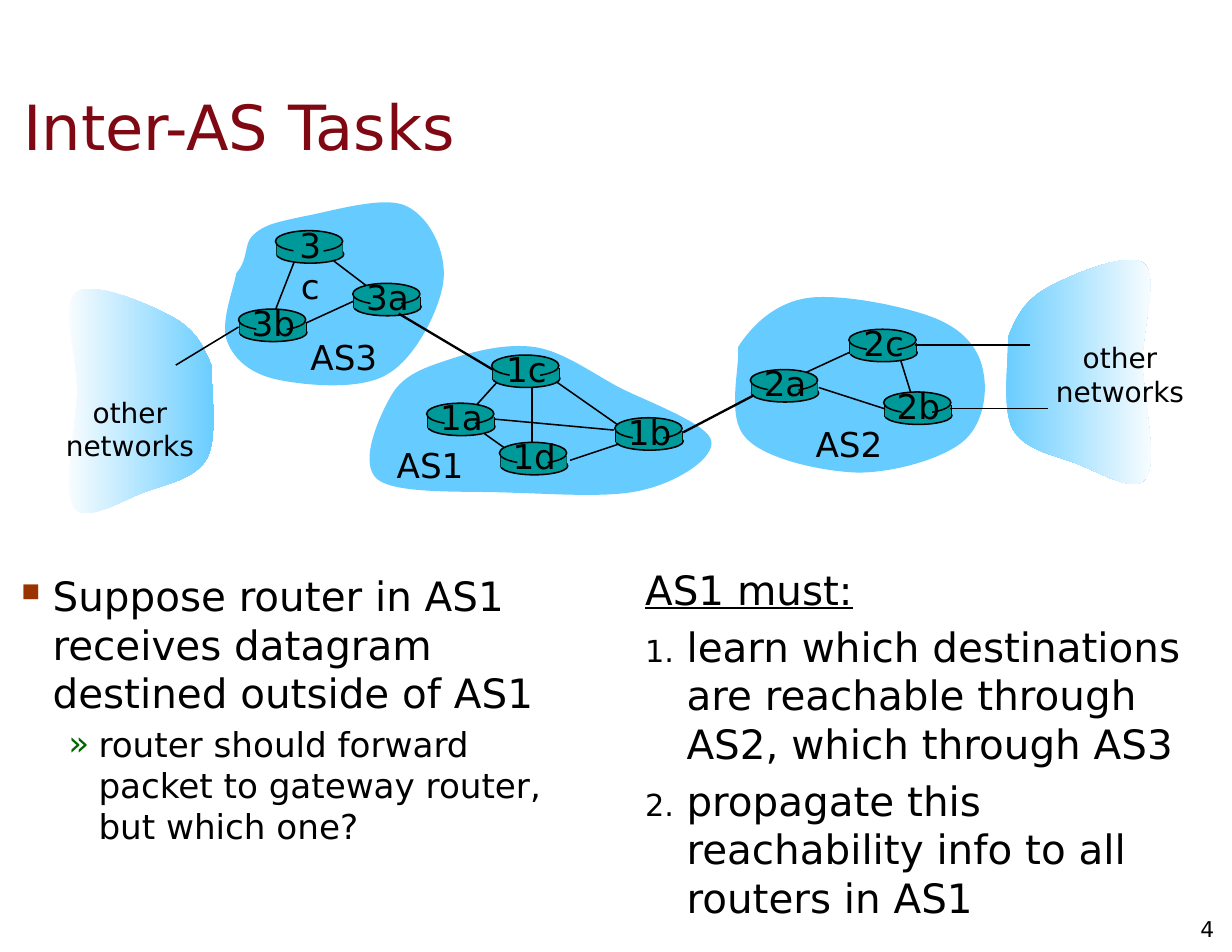
from dataclasses import dataclass
from lxml import etree
from pptx import Presentation
from pptx.dml.color import RGBColor
from pptx.enum.shapes import MSO_CONNECTOR, MSO_SHAPE
from pptx.enum.text import MSO_ANCHOR, MSO_AUTO_SIZE, PP_ALIGN
from pptx.oxml.ns import qn
from pptx.util import Inches, Pt


@dataclass(frozen=True)
class Theme:
    font: str = "DejaVu Sans"
    black: str = "000000"
    white: str = "FFFFFF"
    title: str = "7F0813"
    cloud: str = "66CCFF"
    router: str = "009999"
    square: str = "993300"
    chevron: str = "006600"
    title_size: int = 40
    body_size: int = 26
    label_size: int = 22
    cloud_size: int = 18
    number_size: int = 14


THEME = Theme()

# Outlines: a start point, then cubic curves, in inches from the region's corner
OTHER_OUTLINE = ((.06, .77), [
    (.13, .59, .21, .44, .41, .33), (.61, .22, 1.12, 0, 1.27, .11),
    (1.41, .22, 1.26, .68, 1.26, 1), (1.27, 1.32, 1.4, 1.88, 1.29, 2.03),
    (1.19, 2.18, .85, 1.96, .65, 1.89), (.45, 1.82, .2, 1.77, .1, 1.59),
    (0, 1.4, .07, .94, .06, .77)])
OTHER_WIDTH = 1.41

# Each system: label place, outline, links, routers
AS3 = ("AS3", (.7, 1.21), ((.15, .7), [
    (.27, .56, .21, .43, .31, .35), (.41, .26, .53, .24, .76, .19),
    (.99, .15, 1.47, 0, 1.67, .1), (1.88, .2, 2.03, .51, 2, .77),
    (1.97, 1.02, 1.75, 1.46, 1.5, 1.6), (1.26, 1.75, .76, 1.7, .52, 1.65),
    (.28, 1.6, .13, 1.47, .07, 1.31), (0, 1.15, .13, .83, .15, .7)]),
    [(.76, 1.15, 1.24, .93), (1.31, .81, 1.02, .59), (.67, .59, .49, 1.05)],
    {"3b": (.17, 1.02), "3c": (.5, .32), "3a": (1.19, .79)})
AS1 = ("AS1", (.24, .86), ((.31, .46), [
    (.42, .28, .61, .22, .82, .15), (1.03, .08, 1.33, 0, 1.59, .04),
    (1.84, .08, 2.08, .26, 2.34, .4), (2.6, .53, 3.12, .72, 3.16, .87),
    (3.2, 1.03, 2.86, 1.24, 2.57, 1.31), (2.28, 1.39, 1.79, 1.35, 1.39, 1.34),
    (1, 1.32, .36, 1.36, .18, 1.22), (0, 1.07, .21, .63, .31, .46)]),
    [(1.25, .35, 1.07, .55), (1.56, .39, 1.56, .95), (1.75, .33, 2.35, .75),
     (2.35, .9, 1.9, 1.05), (2.29, .78, 1.2, .68), (1.09, .78, 1.33, .95)],
    {"1c": (1.2, .11), "1a": (.62, .54), "1d": (1.27, .89), "1b": (2.3, .67)})
AS2 = ("AS2", (.69, 1.11), ((.11, .48), [
    (.23, .29, .44, .08, .74, .04), (1.04, 0, 1.63, .12, 1.89, .23),
    (2.15, .34, 2.27, .52, 2.3, .7), (2.34, .89, 2.3, 1.18, 2.11, 1.33),
    (1.92, 1.48, 1.5, 1.6, 1.18, 1.6), (.86, 1.59, .35, 1.48, .18, 1.29),
    (0, 1.11, .13, .65, .11, .48)]),
    [(.62, .75, 1.14, .51), (.83, .84, 1.42, 1.03), (1.56, .59, 1.65, .88)],
    {"2a": (.22, .68), "2c": (1.1, .32), "2b": (1.41, .88)})
# Links between systems: start, end, width in points
OUTER_LINKS = [(2.13, 2.92, 1.57, 3.26, 1), (3.56, 2.8, 4.4, 3.3, 1.5),
               (6.1, 3.86, 6.73, 3.53, 1.5), (8.17, 3.08, 9.2, 3.08, .75),
               (8.48, 3.65, 9.36, 3.65, .75)]


def color(value):
    return RGBColor.from_string(value)


def add_text_frame(slide, box, inset=(.11, .05), wrap=True, anchor=MSO_ANCHOR.TOP):
    frame = slide.shapes.add_textbox(*map(Inches, box)).text_frame
    frame.margin_left = frame.margin_right = Inches(inset[0])
    frame.margin_top = frame.margin_bottom = Inches(inset[1])
    frame.word_wrap = wrap
    frame.vertical_anchor = anchor
    return frame


def add_run(paragraph, text, size, ink=THEME.black, underline=None):
    run = paragraph.add_run()
    run.text = text
    run.font.name, run.font.size = THEME.font, Pt(size)
    run.font.color.rgb = color(ink)
    run.font.underline = underline


def add_label(slide, box, lines, size, align=PP_ALIGN.CENTER, inset=(.1, .05), wrap=False):
    frame = add_text_frame(slide, box, inset, wrap)
    frame.auto_size = MSO_AUTO_SIZE.SHAPE_TO_FIT_TEXT
    for index, line in enumerate(lines):
        paragraph = frame.add_paragraph() if index else frame.paragraphs[0]
        paragraph.alignment = align
        add_run(paragraph, line, size)


def set_bullet(paragraph, left, hanging, kind, value, ink, percent=100, font=None):
    properties = paragraph._p.get_or_add_pPr()
    properties.set("marL", str(Inches(left)))
    properties.set("indent", str(-Inches(hanging)))
    bullet_color = etree.SubElement(properties, qn("a:buClr"))
    etree.SubElement(bullet_color, qn("a:srgbClr")).set("val", ink)
    etree.SubElement(properties, qn("a:buSzPct")).set("val", str(percent * 1000))
    if font:
        etree.SubElement(properties, qn("a:buFont")).set("typeface", font)
    attribute = "char" if kind == "a:buChar" else "type"
    etree.SubElement(properties, qn(kind)).set(attribute, value)


def add_line(slide, left, top, points, width=1):
    x1, y1, x2, y2 = points
    line = slide.shapes.add_connector(
        MSO_CONNECTOR.STRAIGHT, *map(Inches, (left + x1, top + y1, left + x2, top + y2)))
    line.line.color.rgb = color(THEME.black)
    line.line.width = Pt(width)
    etree.SubElement(line._element.spPr, qn("a:effectLst"))


def add_solid(slide, kind, box, outlined):
    shape = slide.shapes.add_shape(kind, *map(Inches, box))
    shape.shadow.inherit = False
    shape.fill.solid()
    shape.fill.fore_color.rgb = color(THEME.router)
    if outlined:
        shape.line.color.rgb = color(THEME.black)
        shape.line.width = Pt(1)
    else:
        shape.line.fill.background()


def add_cloud(slide, left, top, outline, mirror_width=None):
    start, curves = outline
    points = [start] + [curve[i:i + 2] for curve in curves for i in (0, 2, 4)]
    if mirror_width:
        points = [(mirror_width - x, y) for x, y in points]
    placed = [(Inches(left + x), Inches(top + y)) for x, y in points]
    builder = slide.shapes.build_freeform(*placed[0])
    builder.add_line_segments(placed[1:], close=True)
    shape = builder.convert_to_shape()
    # Every three segments become the control points of one cubic curve
    segments = list(shape._element.iter(qn("a:lnTo")))
    for first, second, third in zip(segments[::3], segments[1::3], segments[2::3]):
        first.tag = qn("a:cubicBezTo")
        for segment in (second, third):
            first.append(segment[0])
            segment.getparent().remove(segment)
    shape.shadow.inherit = False
    shape.line.fill.background()
    shape.fill.solid()
    shape.fill.fore_color.rgb = color(THEME.cloud)
    return shape


def add_router(slide, left, top, name):
    add_solid(slide, MSO_SHAPE.OVAL, (left + .01, top + .13, .6, .16), True)
    for x in (.01, .6):
        add_line(slide, left, top, (x, .12, x, .22))
    add_solid(slide, MSO_SHAPE.RECTANGLE, (left + .01, top + .12, .59, .1), False)
    add_solid(slide, MSO_SHAPE.OVAL, (left, top, .6, .19), True)
    add_solid(slide, MSO_SHAPE.RECTANGLE, (left + .16, top + .02, .27, .24), False)
    # The 3c label breaks over two lines
    wrap = name == "3c"
    width = .54 if wrap else .59
    add_label(slide, (left + .31 - width / 2, top - .11, width, .47), [name],
              THEME.label_size, wrap=wrap)


def add_system(slide, left, top, system):
    name, (label_x, label_y), outline, links, routers = system
    add_cloud(slide, left, top, outline)
    add_label(slide, (left + label_x, top + label_y, .82, .48), [name], THEME.label_size)
    for link in links:
        add_line(slide, left, top, link)
    for router, (x, y) in routers.items():
        add_router(slide, left + x, top + y, router)


def add_other_networks(slide, left, top, label_box, mirrored=False):
    shape = add_cloud(slide, left, top, OTHER_OUTLINE, OTHER_WIDTH if mirrored else None)
    shape.fill.gradient()
    shape.fill.gradient_angle = 0
    inks = (THEME.white, THEME.cloud) if mirrored else (THEME.cloud, THEME.white)
    for stop, position, ink in zip(shape.fill.gradient_stops, (0, 1), inks):
        stop.position = position
        stop.color.rgb = color(ink)
    add_label(slide, label_box, ["other", "networks"], THEME.cloud_size, inset=(.11, .06))


def add_title(slide, box):
    frame = add_text_frame(slide, box, anchor=MSO_ANCHOR.MIDDLE)
    add_run(frame.paragraphs[0], "Inter-AS Tasks", THEME.title_size, THEME.title)


def add_problem(slide, box):
    frame = add_text_frame(slide, box)
    first = frame.paragraphs[0]
    set_bullet(first, .42, .28, "a:buChar", "■", THEME.square, 63)
    add_run(first, "Suppose router in AS1 receives datagram destined outside of AS1",
            THEME.body_size)
    second = frame.add_paragraph()
    second.level = 1
    set_bullet(second, .83, .27, "a:buChar", "»", THEME.chevron, font=THEME.font)
    second.space_before = Pt(4.4)
    add_run(second, "router should forward packet to gateway router, but which one?",
            THEME.label_size)


def add_duties(slide, box):
    frame = add_text_frame(slide, box)
    add_run(frame.paragraphs[0], "AS1 must:", THEME.body_size, underline=True)
    for duty in ("learn which destinations are reachable through AS2, which through AS3",
                 "propagate this reachability info to all routers in AS1"):
        paragraph = frame.add_paragraph()
        set_bullet(paragraph, .37, .37, "a:buAutoNum", "arabicPeriod", THEME.black, 75)
        paragraph.space_before = Pt(5.2)
        add_run(paragraph, duty, THEME.body_size)


def main():
    presentation = Presentation()
    presentation.slide_width, presentation.slide_height = Inches(11), Inches(8.5)
    slide = presentation.slides.add_slide(presentation.slide_layouts[6])
    add_title(slide, (.1, .41, 9.35, 1.42))
    add_problem(slide, (-.06, 5.05, 5.24, 2.89))
    add_duties(slide, (5.65, 5, 5.35, 3.16))
    # Network diagram
    add_other_networks(slide, 8.94, 2.24, (9.31, 2.98, 1.38, .72))
    add_other_networks(slide, .54, 2.5, (.47, 3.47, 1.38, .72), mirrored=True)
    add_system(slide, 6.48, 2.62, AS2)
    add_system(slide, 1.96, 1.74, AS3)
    add_system(slide, 3.19, 3.06, AS1)
    for *points, width in OUTER_LINKS:
        add_line(slide, 0, 0, points, width)
    # Slide number
    add_label(slide, (10.6, 8.18, .34, .24), ["4"], THEME.number_size, PP_ALIGN.RIGHT, (.1, 0))
    presentation.save("out.pptx")


if __name__ == "__main__":
    main()
